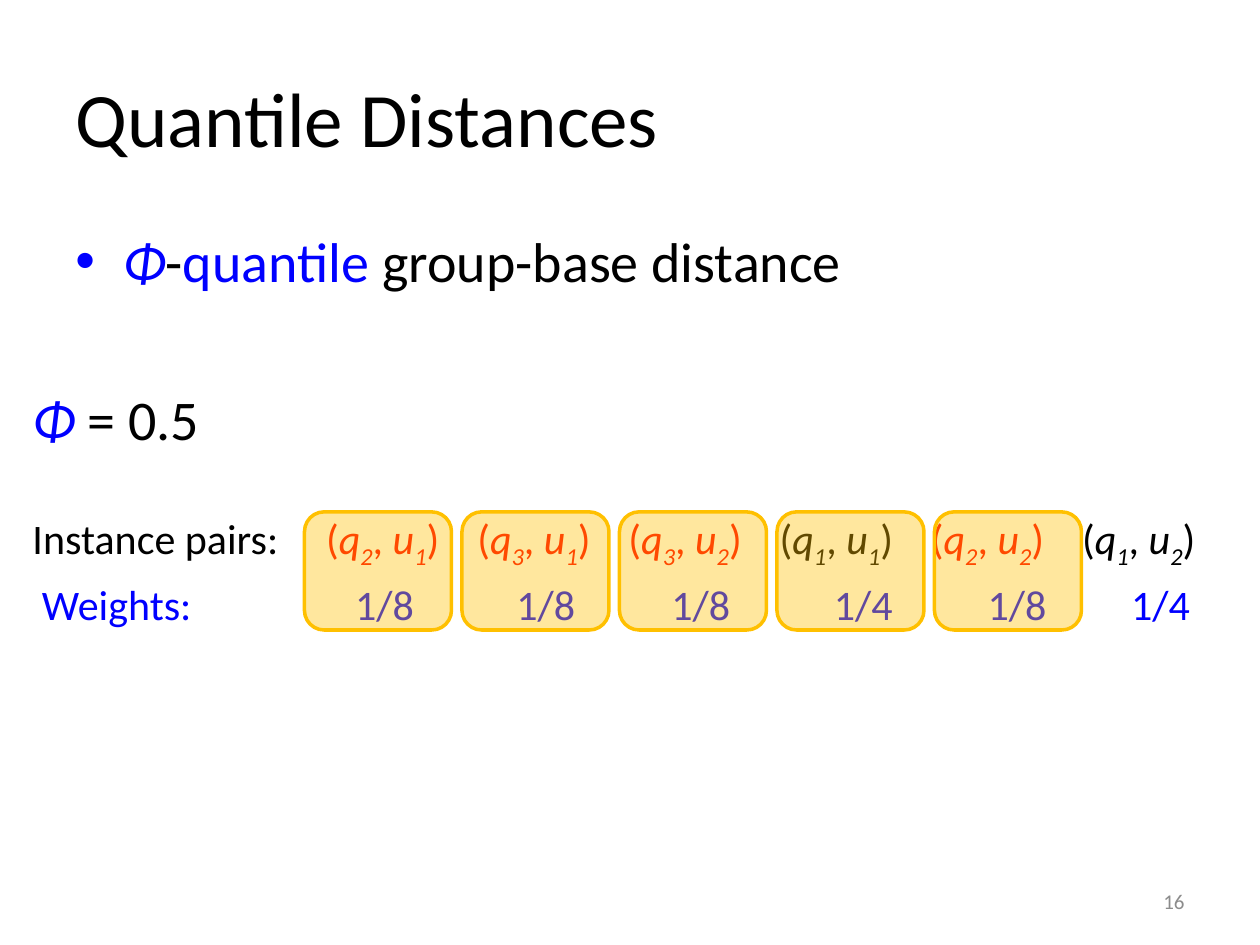
from lxml import etree
from pptx import Presentation
from pptx.dml.color import RGBColor
from pptx.enum.shapes import MSO_SHAPE
from pptx.enum.text import MSO_ANCHOR, PP_ALIGN
from pptx.oxml.ns import qn
from pptx.util import Inches, Pt

BLACK = RGBColor(0x00, 0x00, 0x00)
BLUE = RGBColor(0x00, 0x00, 0xFF)
RED = RGBColor(0xFF, 0x00, 0x00)
GREY = RGBColor(0x8C, 0x8C, 0x8C)
AMBER = RGBColor(0xFF, 0xC0, 0x00)

ROUNDED = MSO_SHAPE.ROUNDED_RECTANGLE
MIDDLE, TOP = MSO_ANCHOR.MIDDLE, MSO_ANCHOR.TOP
LEFT, RIGHT = PP_ALIGN.LEFT, PP_ALIGN.RIGHT

COLUMNS, ROWS = 120, 90
TITLE_ONLY = 5


class QuantileSlide:
    """Holds the style and the slide; places are in grid columns and rows."""

    font = "Calibri"

    def __init__(self, deck):
        self.slide = deck.slides.add_slide(deck.slide_layouts[TITLE_ONLY])
        self.column = deck.slide_width / COLUMNS
        self.row = deck.slide_height / ROWS

    def grid(self, left, top, width, height):
        return (round(left * self.column), round(top * self.row),
                round(width * self.column), round(height * self.row))

    def run(self, paragraph, text, size, color, italic=False, subscript=False):
        run = paragraph.add_run()
        run.text = text
        run.font.name = self.font
        run.font.size = Pt(size)
        run.font.color.rgb = color
        run.font.italic = italic
        if subscript:
            run.font._element.set("baseline", "-25000")

    def title(self, place, text):
        title = self.slide.shapes.title
        title.left, title.top, title.width, title.height = self.grid(*place)
        title.text_frame.vertical_anchor = MIDDLE
        heading = title.text_frame.paragraphs[0]
        heading.alignment = LEFT
        self.run(heading, text, 44, BLACK)

    def text_box(self, place, anchor=TOP):
        frame = self.slide.shapes.add_textbox(*self.grid(*place)).text_frame
        frame.word_wrap = True
        frame.vertical_anchor = anchor
        return frame

    def line(self, place, parts, size, anchor=TOP, align=LEFT):
        paragraph = self.text_box(place, anchor).paragraphs[0]
        paragraph.alignment = align
        paragraph.space_before = Pt(size * 0.2)
        for text, color, italic in parts:
            self.run(paragraph, text, size, color, italic)
        return paragraph

    def bullet(self, paragraph, indent):
        properties = paragraph._p.get_or_add_pPr()
        properties.set("marL", str(Inches(indent)))
        properties.set("indent", str(-Inches(indent)))
        etree.SubElement(properties, qn("a:buFont")).set("typeface", "Arial")
        etree.SubElement(properties, qn("a:buChar")).set("char", "•")

    def tab_stops(self, paragraph, stops):
        tabs = etree.SubElement(paragraph._p.get_or_add_pPr(), qn("a:tabLst"))
        for stop in stops:
            tab = etree.SubElement(tabs, qn("a:tab"))
            tab.set("pos", str(Inches(stop)))
            tab.set("algn", "l")

    def pair(self, paragraph, query, user, color, size):
        self.run(paragraph, "\t(", size, color)
        self.run(paragraph, "q", size, color, True)
        self.run(paragraph, query, size, color, True, True)
        self.run(paragraph, ", ", size, color)
        self.run(paragraph, "u", size, color, True)
        self.run(paragraph, user, size, color, True, True)
        self.run(paragraph, ")", size, color)

    def highlight(self, place, opacity=38):
        box = self.slide.shapes.add_shape(ROUNDED, *self.grid(*place))
        box.shadow.inherit = False
        box.fill.solid()
        box.fill.fore_color.rgb = AMBER
        tint = box.fill._xPr.find(".//" + qn("a:srgbClr"))
        etree.SubElement(tint, qn("a:alpha")).set("val", str(opacity * 1000))
        box.line.color.rgb = AMBER
        box.line.width = Pt(2)


def main():
    deck = Presentation()
    deck.slide_width, deck.slide_height = Inches(10), Inches(7.5)
    page = QuantileSlide(deck)

    # Title and definition
    page.title((6, 3.6, 108, 15), "Quantile Distances")
    definition = page.line(
        (6, 21, 108, 10),
        [("Φ", BLUE, True), ("-", BLACK, False), ("quantile ", BLUE, False),
         ("group-base distance", BLACK, False)], 32)
    page.bullet(definition, 0.38)

    # Slide number
    page.line((86, 83.4, 28, 4.8), [("16", GREY, False)], 12, MIDDLE, RIGHT)

    # Instance pairs with their weights, aligned by tab stops
    pairs = [("2", "1", RED), ("3", "1", RED), ("3", "2", RED),
             ("1", "1", BLACK), ("2", "2", RED), ("1", "2", BLACK)]
    weights = ["1/8", "1/8", "1/8", "1/4", "1/8", "1/4"]
    size = 24
    listing = page.text_box((1.92, 48.24, 117.24, 14.64))
    pair_row, weight_row = listing.paragraphs[0], listing.add_paragraph()
    for row in (pair_row, weight_row):
        row.space_before = Pt(size * 0.2)
    page.tab_stops(pair_row, [2.33 + 1.2 * i for i in range(len(pairs))])
    page.tab_stops(weight_row, [2.56, 3.84, 5.07, 6.36, 7.58, 8.72])
    page.run(pair_row, "Instance pairs:", size, BLACK)
    for query, user, color in pairs:
        page.pair(pair_row, query, user, color, size)
    page.run(weight_row, " Weights:", size, BLUE)
    for weight in weights:
        page.run(weight_row, "\t" + weight, size, BLUE)

    # Chosen quantile
    page.line((1.92, 36, 20.16, 10),
              [("Φ", BLUE, True), (" = 0.5", BLACK, False)], 32)

    # Highlights over the first five pairs
    for i in range(5):
        page.highlight((29 + 15 * i, 48.75, 14, 11.25))

    deck.save("out.pptx")


if __name__ == "__main__":
    main()
